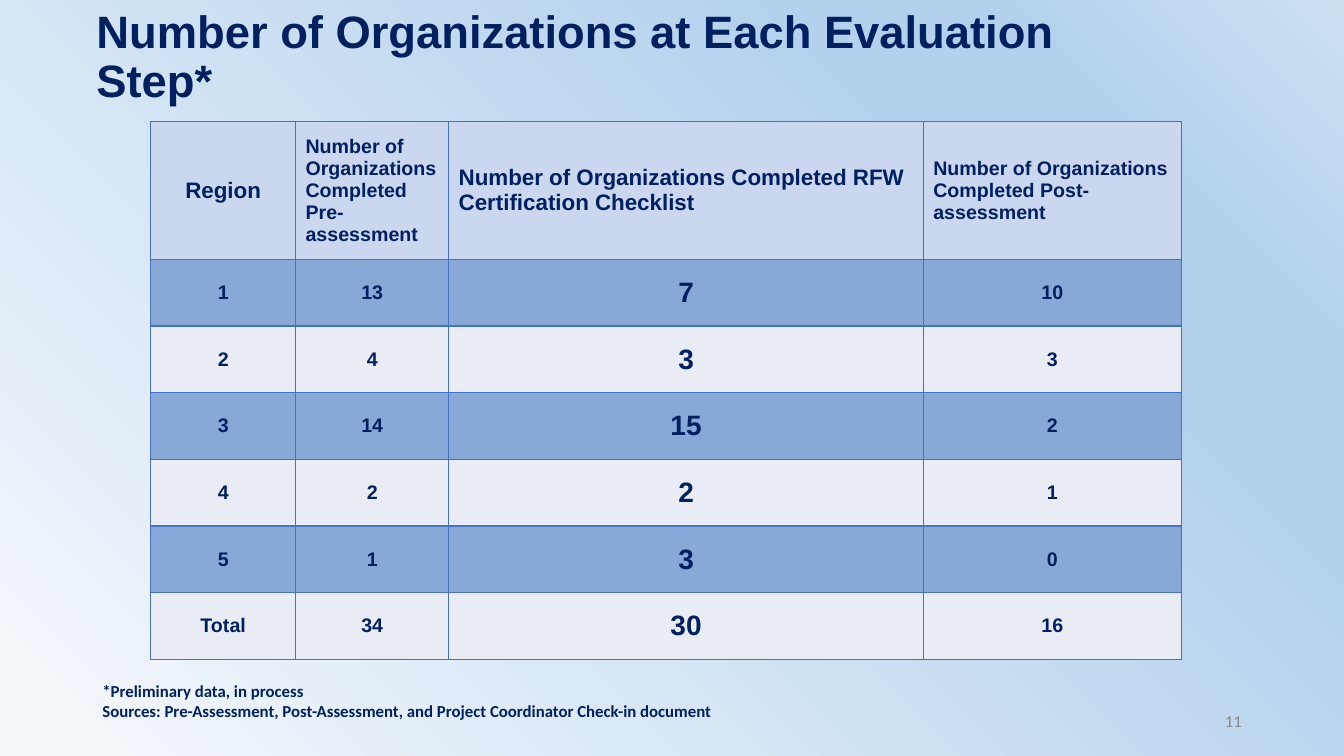
"""Build a slide tabulating organizations at each evaluation step by region."""
from copy import deepcopy

from lxml import etree
from pptx import Presentation
from pptx import util as u
from pptx.dml import color
from pptx.enum import text
from pptx.oxml import ns

COLORS = {
    "navy": "002060", "grey": "888888", "border": "4472C4",
    "header": "CAD7EE", "odd": "88A8D8", "even": "E9EBF5",
}
BACKGROUND_STOPS = [(0, "F6F9FC"), (0.74, "B3D1EC"), (0.83, "B3D1EC"), (1, "CCE0F2")]
HEADERS = [
    "Region",
    "Number of Organizations Completed Pre-assessment",
    "Number of Organizations Completed RFW Certification Checklist",
    "Number of Organizations Completed Post-assessment",
]
COUNTS = [
    ("1", "13", "7", "10"),
    ("2", "4", "3", "3"),
    ("3", "14", "15", "2"),
    ("4", "2", "2", "1"),
    ("5", "1", "3", "0"),
    ("Total", "34", "30", "16"),
]
COLUMN_WIDTHS = [3.65, 3.86, 11.96, 6.5]
HEADER_SIZES = [16, 14, 16, 14]
BODY_SIZES = [14, 14, 20, 14]
HEADER_HEIGHT, BODY_HEIGHT = 3.3, 1.68
LEFT, CENTER, RIGHT = text.PP_ALIGN.LEFT, text.PP_ALIGN.CENTER, text.PP_ALIGN.RIGHT
MIDDLE = text.MSO_ANCHOR.MIDDLE


def rgb(name):
    return color.RGBColor.from_string(COLORS[name])


def set_attributes(target, values):
    for name, value in values.items():
        setattr(target, name, value)


def format_paragraph(paragraph, size, font="Arial", ink="navy", bold=True, **layout):
    set_attributes(paragraph, layout)
    set_attributes(paragraph.font, {"size": u.Pt(size), "name": font, "bold": bold})
    paragraph.font.color.rgb = rgb(ink)


def paint_background(slide):
    fill = slide.background.fill
    fill.gradient()
    fill.gradient_angle = 45
    stop_list = slide.element.find(".//" + ns.qn("a:gsLst"))
    for _ in range(len(BACKGROUND_STOPS) - len(stop_list)):
        stop_list.append(deepcopy(stop_list[0]))
    for stop, (position, value) in zip(fill.gradient_stops, BACKGROUND_STOPS):
        stop.position = position
        stop.color.rgb = color.RGBColor.from_string(value)


def add_text(slide, box, lines, size, anchor=MIDDLE, **style):
    frame = slide.shapes.add_textbox(*map(u.Cm, box)).text_frame
    set_attributes(frame, {"word_wrap": True, "vertical_anchor": anchor})
    frame.text = "\n".join(lines)
    for paragraph in frame.paragraphs:
        format_paragraph(paragraph, size, **style)


def add_borders(cell):
    properties = cell._tc.get_or_add_tcPr()
    for index, side in enumerate(("lnL", "lnR", "lnT", "lnB")):
        line = etree.Element(ns.qn("a:" + side), w=str(u.Pt(1)))
        fill = etree.SubElement(line, ns.qn("a:solidFill"))
        etree.SubElement(fill, ns.qn("a:srgbClr"), val=COLORS["border"])
        properties.insert(index, line)


def fill_cell(cell, content, size, fill, alignment):
    margin = u.Cm(0.25)
    set_attributes(cell, {
        "text": content, "vertical_anchor": MIDDLE,
        "margin_left": margin, "margin_right": margin,
        "margin_top": margin, "margin_bottom": margin,
    })
    format_paragraph(cell.text_frame.paragraphs[0], size, alignment=alignment)
    cell.fill.solid()
    cell.fill.fore_color.rgb = rgb(fill)
    add_borders(cell)


def add_counts_table(slide, left, top):
    rows = [HEADERS, *COUNTS]
    heights = [HEADER_HEIGHT] + [BODY_HEIGHT] * len(COUNTS)
    box = (left, top, sum(COLUMN_WIDTHS), sum(heights))
    table = slide.shapes.add_table(len(rows), len(HEADERS), *map(u.Cm, box)).table
    for column, width in zip(table.columns, COLUMN_WIDTHS):
        column.width = u.Cm(width)
    for index, (row, values, height) in enumerate(zip(table.rows, rows, heights)):
        row.height = u.Cm(height)
        fill = "header" if index == 0 else "odd" if index % 2 else "even"
        sizes = BODY_SIZES if index else HEADER_SIZES
        for position, (cell, value) in enumerate(zip(row.cells, values)):
            alignment = LEFT if index == 0 and position else CENTER
            fill_cell(cell, value, sizes[position], fill, alignment)


def main():
    presentation = Presentation()
    set_attributes(presentation, {"slide_width": u.Cm(33.87), "slide_height": u.Cm(19.05)})
    slide = presentation.slides.add_slide(presentation.slide_layouts[6])
    paint_background(slide)
    add_text(slide, (2.18, 0.48, 27.58, 1.98),
             ["Number of Organizations at Each Evaluation Step*"], 32.4, line_spacing=0.9)
    add_text(slide, (23.93, 17.65, 7.62, 1.02), ["11"], 12,
             font="Calibri", ink="grey", bold=False, alignment=RIGHT)
    add_counts_table(slide, 3.8, 3.07)
    add_text(slide, (2.33, 17.02, 16.71, 1.27), [
        "*Preliminary data, in process",
        "Sources: Pre-Assessment, Post-Assessment, and Project Coordinator Check-in document",
    ], 12, anchor=text.MSO_ANCHOR.TOP, font="Calibri")
    presentation.save("out.pptx")


if __name__ == "__main__":
    main()
